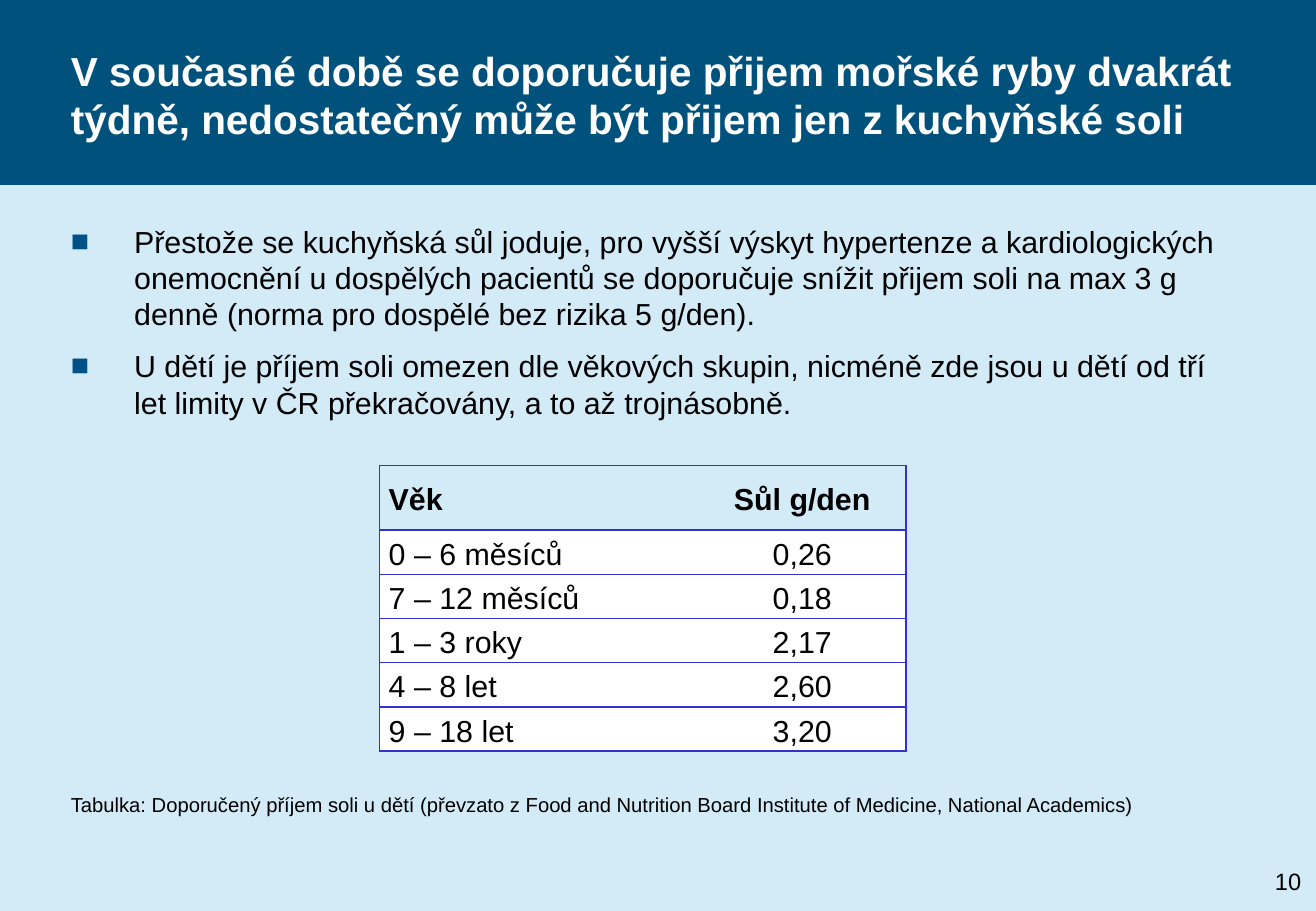
"""Build a slide on salt intake in children: title band, two bullets, a table and its caption."""
from dataclasses import dataclass, field

from lxml.etree import SubElement as Sub
from pptx import Presentation as Deck
from pptx.dml.color import RGBColor as Rgb
from pptx.enum.shapes import MSO_CONNECTOR as Conn, MSO_SHAPE as Form
from pptx.enum.text import MSO_ANCHOR as Anchor, PP_ALIGN as Align
from pptx.oxml.ns import qn
from pptx.slide import Slide
from pptx.util import Length, Pt

COLS, ROWS = 130, 90
UNIT = Pt(6)
HUES = {
    "page": "D3EAF7",
    "band": "00517C",
    "mark": "005188",
    "grid": "3333CC",
    "white": "FFFFFF",
    "black": "000000",
}
FONT = {"name": "Arial", "bold": False}
CELL = {
    "margin_left": Pt(5.4),
    "margin_right": Pt(5.4),
    "margin_top": Pt(0.7),
    "margin_bottom": Pt(0.7),
    "vertical_anchor": Anchor.MIDDLE,
}
SIDES = ({"L": True, "R": False}, {"L": False, "R": True})
WIDTHS = (31.5, 20.5)
HEAD, ROW = 6.36, 4.12
DATA = (
    ("Věk", "Sůl g/den"),
    ("0 – 6 měsíců", "0,26"),
    ("7 – 12 měsíců", "0,18"),
    ("1 – 3 roky", "2,17"),
    ("4 – 8 let", "2,60"),
    ("9 – 18 let", "3,20"),
)


@dataclass(frozen=True)
class Box:
    col: float
    row: float
    wide: float
    high: float
    lines: tuple[str, ...]
    size: float
    hue: str = "black"
    bold: bool = False
    mark: bool = False
    frame: dict = field(default_factory=dict)
    para: dict = field(default_factory=dict)


@dataclass(frozen=True)
class Rule:
    start: float
    end: float
    row: float


RULES = (Rule(7, 123, 18), Rule(0, COLS, 18))
BOXES = (
    Box(7, 1.8, 116, 15,
        ("V současné době se doporučuje přijem mořské ryby dvakrát týdně, "
         "nedostatečný může být přijem jen z kuchyňské soli",),
        24, "white", bold=True, frame={"vertical_anchor": Anchor.MIDDLE}),
    Box(7, 22, 116, 20,
        ("Přestože se kuchyňská sůl joduje, pro vyšší výskyt hypertenze a "
         "kardiologických onemocnění u dospělých pacientů se doporučuje snížit "
         "přijem soli na max 3 g denně (norma pro dospělé bez rizika 5 g/den).",
         "U dětí je příjem soli omezen dle věkových skupin, nicméně zde jsou u "
         "dětí od tří let limity v ČR překračovány, a to až trojnásobně."),
        18, mark=True, para={"space_after": Pt(9)}),
    Box(7, 78.3, 116, 3,
        ("Tabulka: Doporučený příjem soli u dětí (převzato z Food and Nutrition "
         "Board Institute of Medicine, National Academics)",), 12),
    Box(124.5, 84, 5.5, 6, ("10",), 14,
        frame={"vertical_anchor": Anchor.MIDDLE, "margin_left": Pt(7.2),
               "margin_right": Pt(7.2)},
        para={"alignment": Align.CENTER}),
)


def span(*units: float) -> list[Length]:
    return [Length(round(n * UNIT)) for n in units]


def tint(name: str) -> Rgb:
    return Rgb.from_string(HUES[name])


def apply(item: object, *looks: dict) -> None:
    for look in looks:
        for key, value in look.items():
            setattr(item, key, value)


def style(para, text: str, size: float, hue: str, bold: bool, look: dict) -> None:
    run = para.add_run()
    run.text = text
    apply(run.font, FONT, {"size": Pt(size), "bold": bold})
    run.font.color.rgb = tint(hue)
    apply(para, look)


def bullet(para) -> None:
    props = para._p.get_or_add_pPr()
    indent = round(6.25 * UNIT)
    props.set("marL", str(indent))
    props.set("indent", str(-indent))
    Sub(Sub(props, qn("a:buClr")), qn("a:srgbClr"), val=HUES["mark"])
    Sub(props, qn("a:buFont"), typeface="Arial")
    Sub(props, qn("a:buChar"), char="■")


def write(slide: Slide, box: Box) -> None:
    shape = slide.shapes.add_textbox(*span(box.col, box.row, box.wide, box.high))
    frame = shape.text_frame
    edges = {f"margin_{side}": 0 for side in ("left", "right", "top", "bottom")}
    apply(frame, edges, {"word_wrap": True}, box.frame)
    for n, text in enumerate(box.lines):
        para = frame.add_paragraph() if n else frame.paragraphs[0]
        style(para, text, box.size, box.hue, box.bold, box.para)
        if box.mark:
            bullet(para)


def band(slide: Slide) -> None:
    shape = slide.shapes.add_shape(Form.RECTANGLE, *span(0, 0, COLS, 18))
    shape.shadow.inherit = False
    shape.fill.solid()
    shape.fill.fore_color.rgb = tint("band")
    shape.line.fill.background()


def draw(slide: Slide, rule: Rule) -> None:
    ends = span(rule.start, rule.row, rule.end, rule.row)
    line = slide.shapes.add_connector(Conn.STRAIGHT, *ends)
    line.line.color.rgb = tint("mark")
    line.line.width = Pt(3)
    Sub(line._element.spPr, qn("a:effectLst"))


def border(cell, sides: dict[str, bool]) -> None:
    props = cell._tc.get_or_add_tcPr()
    for side, shown in (sides | {"T": True, "B": True}).items():
        line = Sub(props, qn(f"a:ln{side}"), w=str(Pt(1)))
        if shown:
            Sub(Sub(line, qn("a:solidFill")), qn("a:srgbClr"), val=HUES["grid"])
        else:
            Sub(line, qn("a:noFill"))


def table(slide: Slide) -> None:
    tall = HEAD + ROW * (len(DATA) - 1)
    place = span(37.5, 46, sum(WIDTHS), tall)
    grid = slide.shapes.add_table(len(DATA), len(WIDTHS), *place).table
    apply(grid, {"first_row": False, "horz_banding": False})
    for col, width in zip(grid.columns, span(*WIDTHS)):
        col.width = width
    for r, texts in enumerate(DATA):
        top = r == 0
        grid.rows[r].height = span(HEAD if top else ROW)[0]
        for c, text in enumerate(texts):
            cell = grid.cell(r, c)
            apply(cell, CELL)
            border(cell, SIDES[c])
            if top:
                cell.fill.background()
            else:
                cell.fill.solid()
                cell.fill.fore_color.rgb = tint("white")
            look = {"line_spacing": 1.15, "alignment": Align.CENTER if c else Align.LEFT}
            if top and c:
                look["space_after"] = Pt(10)
            style(cell.text_frame.paragraphs[0], text, 18, "black", top, look)


def main() -> None:
    deck = Deck()
    deck.slide_width, deck.slide_height = span(COLS, ROWS)
    slide = deck.slides.add_slide(deck.slide_layouts[6])
    slide.background.fill.solid()
    slide.background.fill.fore_color.rgb = tint("page")
    band(slide)
    for rule in RULES:
        draw(slide, rule)
    for box in BOXES:
        write(slide, box)
    table(slide)
    deck.save("out.pptx")


if __name__ == "__main__":
    main()
